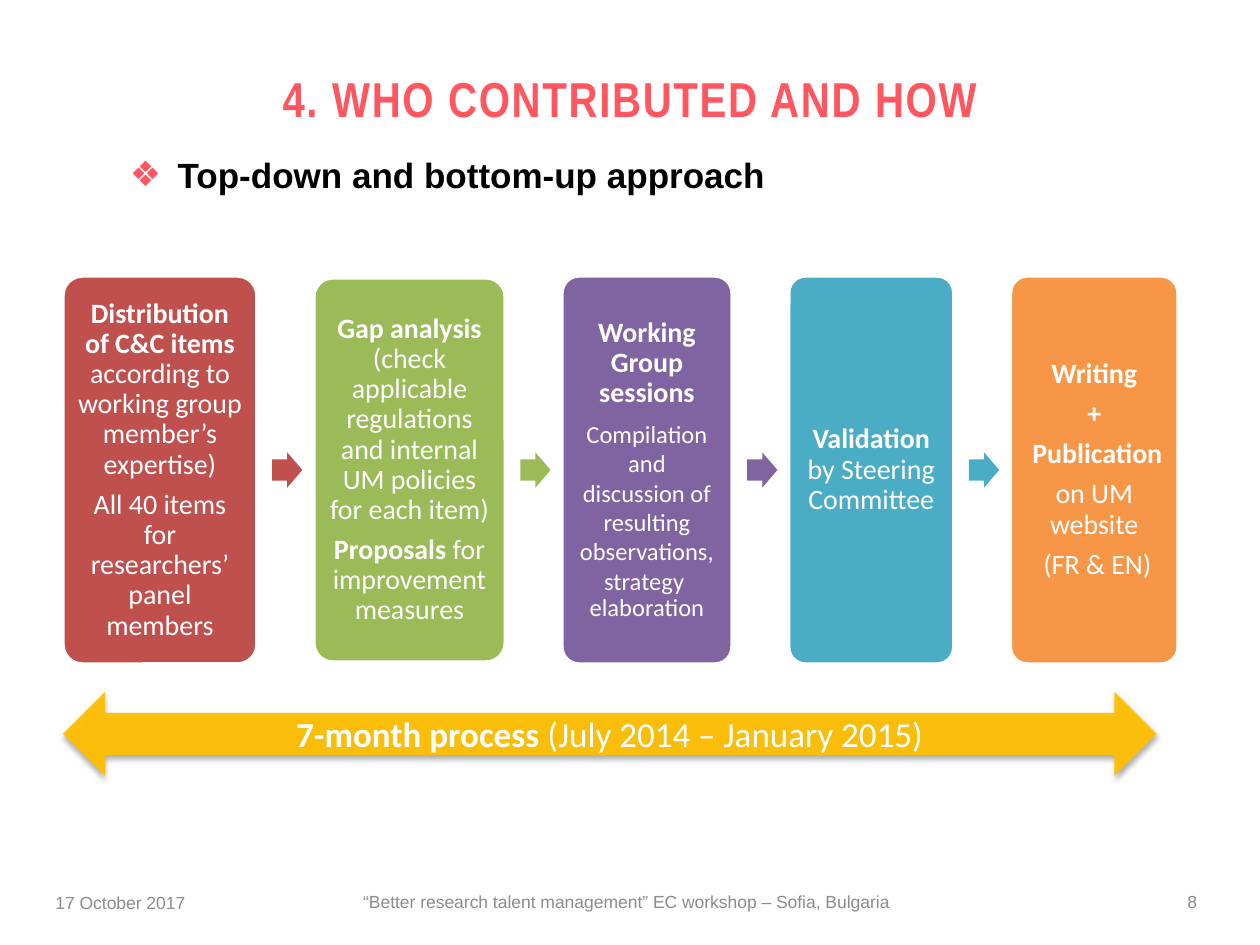
"""Build the slide showing who contributed to the process and how."""
from lxml import etree
from pptx import Presentation
from pptx.dml.color import RGBColor
from pptx.enum.shapes import MSO_SHAPE
from pptx.enum.text import MSO_ANCHOR, MSO_AUTO_SIZE, PP_ALIGN
from pptx.oxml import parse_xml
from pptx.oxml.ns import nsdecls, qn
from pptx.util import Inches, Pt

ROUND_RECT = MSO_SHAPE.ROUNDED_RECTANGLE
RIGHT_ARROW = MSO_SHAPE.RIGHT_ARROW
DOUBLE_ARROW = MSO_SHAPE.LEFT_RIGHT_ARROW
TOP, MIDDLE = MSO_ANCHOR.TOP, MSO_ANCHOR.MIDDLE
LEFT, CENTER, RIGHT = PP_ALIGN.LEFT, PP_ALIGN.CENTER, PP_ALIGN.RIGHT
NO_FIT = MSO_AUTO_SIZE.NONE

CORAL = RGBColor(0xFF, 0x56, 0x60)
BLACK = RGBColor(0x00, 0x00, 0x00)
WHITE = RGBColor(0xFF, 0xFF, 0xFF)
GREY = RGBColor(0x8C, 0x8C, 0x8C)
RED = RGBColor(0xC0, 0x50, 0x4D)
GREEN = RGBColor(0x9B, 0xBB, 0x59)
PURPLE = RGBColor(0x80, 0x64, 0xA2)
BLUE = RGBColor(0x4B, 0xAC, 0xC6)
ORANGE = RGBColor(0xF7, 0x96, 0x46)
GOLD = RGBColor(0xFF, 0xC0, 0x00)

STEPS = [
    (RED, 1.54, 3.08, [
        (16, 0.9, [("Distribution of C&C items ", True),
                   ("according to working group member’s expertise)", False)]),
        (16, 0.9, [("All 40 items for researchers’ panel members", False)])]),
    (GREEN, 1.52, 3.05, [
        (16, 0.9, [("Gap analysis ", True),
                   ("(check applicable regulations and internal UM policies for each item)", False)]),
        (16, 0.9, [("Proposals", True), (" for improvement measures", False)])]),
    (PURPLE, 1.35, 3.08, [
        (16, 0.9, [("Working Group sessions", True)]),
        (14, 1.0, [("Compilation and discussion of resulting observations, strategy ", False)]),
        (14, 0.9, [("elaboration", False)])]),
    (BLUE, 1.31, 3.08, [
        (16, 0.9, [("Validation", True), (" by Steering Committee", False)])]),
    (ORANGE, 1.33, 3.08, [
        (16, 0.9, [("Writing", True)]),
        (16, 0.9, [("+", True)]),
        (16, 0.9, [(" ", False), ("Publication", True)]),
        (16, 0.9, [("on UM website", False)]),
        (16, 0.9, [(" (FR & EN)", False)])]),
]
GAP = 0.45
MID_Y = 3.73
FOOTERS = [
    ("17 October 2017", 0.44, 7.08, 2.33, LEFT),
    ("“Better research talent management” EC workshop – Sofia, Bulgaria", 2.68, 7.07, 4.58, CENTER),
    ("8", 7.17, 7.07, 2.33, RIGHT),
]


def add_run(p, text, font, size, color, bold=False):
    r = p.add_run()
    r.text = text
    r.font.name = font
    r.font.size = Pt(size)
    r.font.bold = bold
    r.font.color.rgb = color
    return r


def add_block(kind, left, top, width, height, color):
    sp = s.shapes.add_shape(kind, Inches(left), Inches(top), Inches(width), Inches(height))
    sp.shadow.inherit = False
    sp.fill.solid()
    sp.fill.fore_color.rgb = color
    sp.line.fill.background()
    return sp


prs = Presentation()
prs.slide_width, prs.slide_height = Inches(10), Inches(7.5)
s = prs.slides.add_slide(prs.slide_layouts[1])

title, body = s.shapes.title, s.placeholders[1]
for sp, left, top, width, height in [(title, 0.5, 0.49, 9, 0.47), (body, 0.5, 1.17, 8.87, 0.44)]:
    sp.left, sp.top, sp.width, sp.height = Inches(left), Inches(top), Inches(width), Inches(height)
    sp.text_frame.auto_size = NO_FIT
    sp.text_frame.vertical_anchor = TOP

p = title.text_frame.paragraphs[0]
p.alignment = CENTER
r = add_run(p, "4. WHO CONTRIBUTED AND HOW", "Arial Narrow", 28, CORAL, True)
r.font._element.set("spc", "100")

p = body.text_frame.paragraphs[0]
p.level = 1
pPr = p._p.get_or_add_pPr()
pPr.set("marL", str(Inches(0.81)))
pPr.set("indent", str(Inches(-0.38)))
bu_color = etree.SubElement(pPr, qn("a:buClr"))
etree.SubElement(bu_color, qn("a:srgbClr"), val=str(CORAL))
etree.SubElement(pPr, qn("a:buFont"), typeface="Arial")
etree.SubElement(pPr, qn("a:buChar"), char="❖")
p.space_before = Pt(0)
add_run(p, "Top-down and bottom-up approach", "Arial", 20, BLACK, True)

left = 0.5
for i, (color, width, height, paragraphs) in enumerate(STEPS):
    sp = add_block(ROUND_RECT, left, MID_Y - height / 2, width, height, color)
    sp.adjustments[0] = 0.1
    sp.line.color.rgb = WHITE
    sp.line.width = Pt(2)
    tf = sp.text_frame
    tf.word_wrap = True
    tf.vertical_anchor = MIDDLE
    tf.margin_left = tf.margin_right = tf.margin_top = tf.margin_bottom = Inches(0.07)
    for j, (size, spacing, runs) in enumerate(paragraphs):
        p = tf.add_paragraph() if j else tf.paragraphs[0]
        p.alignment = CENTER
        p.line_spacing = spacing
        p.space_after = Pt(0 if spacing == 1 else 0.35 * size)
        for text, bold in runs:
            add_run(p, text, "Calibri", size, WHITE, bold)
    left += width
    if i < len(STEPS) - 1:
        sp = add_block(RIGHT_ARROW, left + 0.12, MID_Y - 0.14, 0.24, 0.28, color)
        sp.adjustments[0], sp.adjustments[1] = 0.6, 0.5
    left += GAP

sp = add_block(DOUBLE_ARROW, 0.5, 5.49, 8.68, 0.67, GOLD)
spPr = sp._element.spPr
etree.SubElement(spPr.find(f"{qn('a:solidFill')}/{qn('a:srgbClr')}"), qn("a:alpha"), val="94000")
spPr.find(qn("a:effectLst")).append(parse_xml(
    f'<a:outerShdw {nsdecls("a")} blurRad="{Pt(3.1)}" dist="{Pt(1.8)}" dir="5400000" rotWithShape="0">'
    '<a:srgbClr val="000000"><a:alpha val="35000"/></a:srgbClr></a:outerShdw>'))
tf = sp.text_frame
tf.vertical_anchor = MIDDLE
p = tf.paragraphs[0]
p.alignment = CENTER
add_run(p, "7-month process ", "Calibri", 20, WHITE, True)
add_run(p, "(July 2014 – January 2015)", "Calibri", 20, WHITE)

for text, left, top, width, align in FOOTERS:
    sp = s.shapes.add_textbox(Inches(left), Inches(top), Inches(width), Inches(0.17))
    tf = sp.text_frame
    tf.word_wrap = True
    tf.vertical_anchor = MIDDLE
    tf.margin_left = tf.margin_right = tf.margin_top = tf.margin_bottom = 0
    p = tf.paragraphs[0]
    p.alignment = align
    add_run(p, text, "Arial", 10, GREY)

prs.save("out.pptx")
